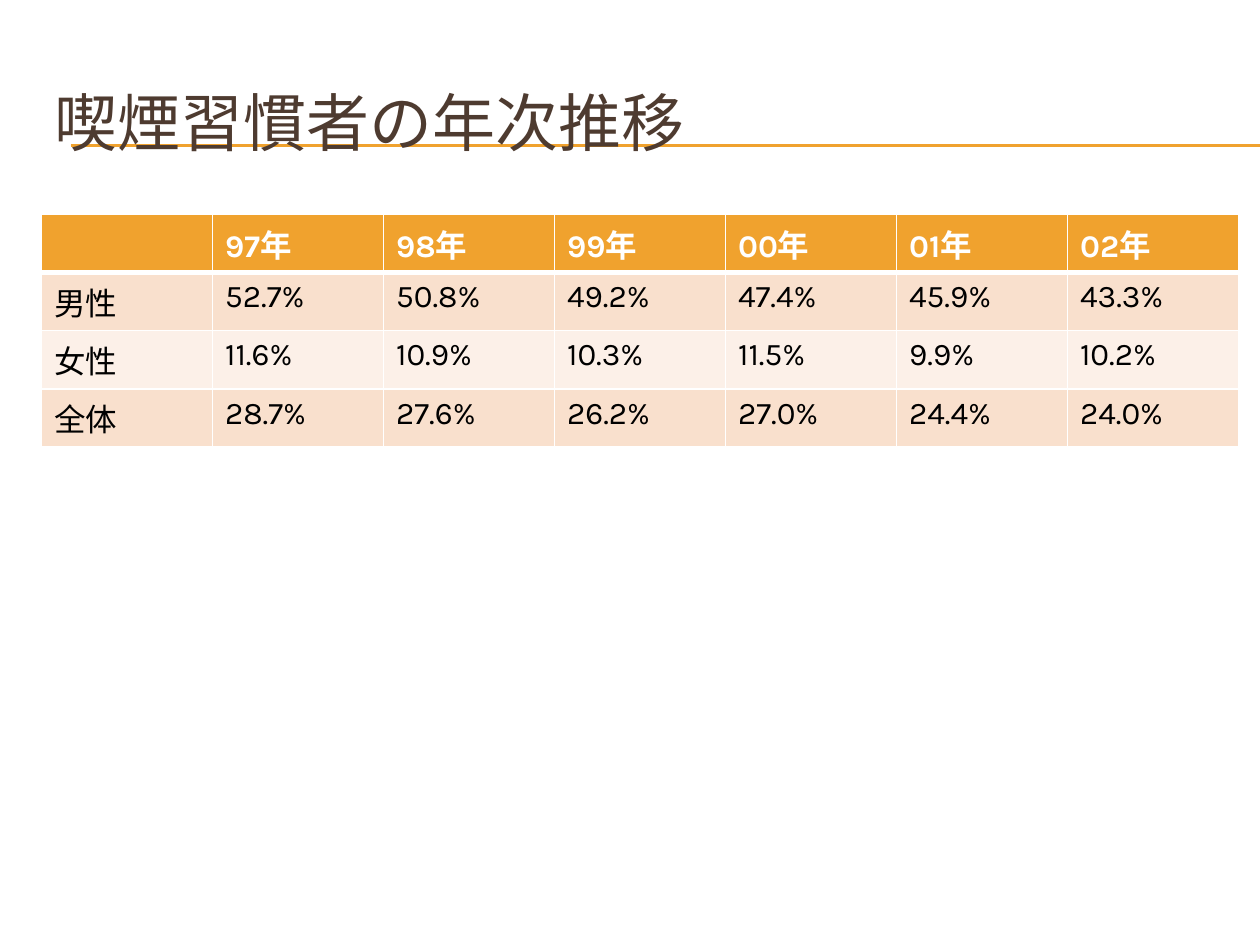
from lxml import etree
from pptx import Presentation
from pptx import util as u
from pptx.dml.color import RGBColor
from pptx.enum import shapes, text
from pptx.oxml.ns import qn

COLORS = {
    "accent": "F0A22E",
    "title": "4E3B30",
    "text": "000000",
    "white": "FFFFFF",
    "odd": "F9E0CD",
    "even": "FCF0E8",
}
ROWS = [
    ["", "97年", "98年", "99年", "00年", "01年", "02年"],
    ["男性", "52.7%", "50.8%", "49.2%", "47.4%", "45.9%", "43.3%"],
    ["女性", "11.6%", "10.9%", "10.3%", "11.5%", "9.9%", "10.2%"],
    ["全体", "28.7%", "27.6%", "26.2%", "27.0%", "24.4%", "24.0%"],
]


class Deck:
    font = "Karla"

    def __init__(self, width, height):
        self.prs = Presentation()
        self.prs.slide_width = u.Inches(width)
        self.prs.slide_height = u.Inches(height)
        self.slide = self.prs.slides.add_slide(self.prs.slide_layouts[5])

    def color(self, name):
        return RGBColor.from_string(COLORS[name])

    def style(self, frame, size, color, bold=False):
        for para in frame.paragraphs:
            for run in para.runs:
                run.font.name = self.font
                run.font.size = u.Pt(size)
                run.font.bold = bold
                run.font.color.rgb = self.color(color)

    def rule(self, left, right, top):
        line = self.slide.shapes.add_connector(
            shapes.MSO_CONNECTOR.STRAIGHT,
            u.Inches(left), u.Inches(top), u.Inches(right), u.Inches(top))
        line.line.color.rgb = self.color("accent")
        line.line.width = u.Pt(0.75)
        etree.SubElement(line._element.spPr, qn("a:effectLst"))

    def title(self, words, left, top, width, height):
        """Fill the title placeholder and bring it in front of the rules."""
        box = self.slide.shapes.title
        box.left, box.top = u.Inches(left), u.Inches(top)
        box.width, box.height = u.Inches(width), u.Inches(height)
        frame = box.text_frame
        frame.text = words
        frame.word_wrap = True
        frame.vertical_anchor = text.MSO_ANCHOR.MIDDLE
        frame.paragraphs[0].alignment = text.PP_ALIGN.LEFT
        self.style(frame, 36, "title")
        self.slide.shapes._spTree.append(box._element)

    def border(self, cell, sides):
        props = cell._tc.get_or_add_tcPr()
        for side, width in sides.items():
            edge = etree.SubElement(props, qn(f"a:ln{side}"), w=str(u.Pt(width)))
            fill = etree.SubElement(edge, qn("a:solidFill"))
            etree.SubElement(fill, qn("a:srgbClr"), val=COLORS["white"])

    def table(self, rows, left, top, width, height):
        grid = self.slide.shapes.add_table(
            len(rows), len(rows[0]), u.Inches(left), u.Inches(top),
            u.Inches(width), u.Inches(height)).table
        for r, row in enumerate(rows):
            head = r == 0
            fill = "accent" if head else "odd" if r % 2 else "even"
            sides = {"L": 1, "R": 1, "T": 3 if r == 1 else 1, "B": 3 if head else 1}
            for c, words in enumerate(row):
                cell = grid.cell(r, c)
                cell.text_frame.text = words
                self.style(cell.text_frame, 18, "white" if head else "text", head)
                self.border(cell, sides)
                cell.fill.solid()
                cell.fill.fore_color.rgb = self.color(fill)


def main():
    deck = Deck(10, 7.5)
    for top in (1.15, 1.16):
        deck.rule(0.56, 10, top)
    deck.title("喫煙習慣者の年次推移", 0.33, 0.5, 9.5, 0.92)
    deck.table(ROWS, 0.33, 1.7, 9.5, 1.62)
    deck.prs.save("out.pptx")


if __name__ == "__main__":
    main()
